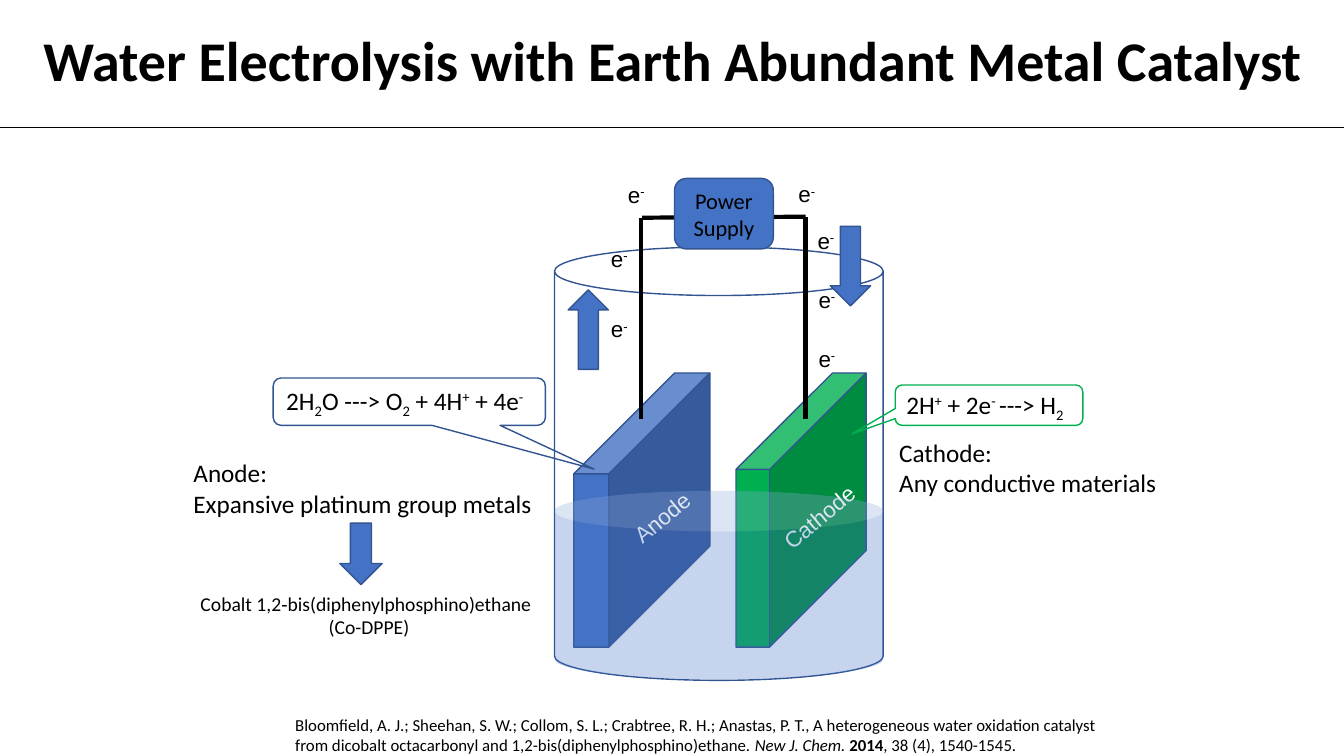
from lxml import etree
from pptx import Presentation
from pptx.dml.color import RGBColor
from pptx.enum.shapes import MSO_CONNECTOR, MSO_SHAPE as SHAPE
from pptx.enum.text import MSO_ANCHOR, MSO_AUTO_SIZE, PP_ALIGN as ALIGN
from pptx.oxml.ns import qn
from pptx.util import Pt

PX = 9144  # 100 px to the inch
COLORS = {"blue": "4472C4", "navy": "325491", "green": "00B050",
          "black": "000000", "white": "FFFFFF"}
BASELINES = {"sub": "-25000", "sup": "30000"}

# Each paragraph is a list of (words, style) runs
TITLE = "Water Electrolysis with Earth Abundant Metal Catalyst"
OXIDATION = [[("2H", ""), ("2", "sub"), ("O ---> O", ""), ("2", "sub"),
              (" + 4H", ""), ("+", "sup"), (" + 4e", ""), ("-", "sup")]]
REDUCTION = [[("2H", ""), ("+", "sup"), (" + 2e", ""), ("- ", "sup"),
              ("---> H", ""), ("2", "sub")]]
ELECTRON = [[("e", ""), ("-", "sup")]]
SUPPLY = [[("Power", "")], [("Supply", "")]]
CATHODE_NOTE = [[("Cathode:", "")], [("Any conductive materials", "")]]
ANODE_NOTE = [[("Anode:", "")], [("Expansive platinum group metals", "")]]
COBALT = [[("Cobalt 1,2‐bis(diphenylphosphino)ethane", "")], [("(Co-DPPE)", "")]]
CITATION = [[
    ("Bloomfield, A. J.; Sheehan, S. W.; Collom, S. L.; Crabtree, R. H.; Anastas, P. T., "
     "A heterogeneous water oxidation catalyst from dicobalt octacarbonyl and "
     "1,2-bis(diphenylphosphino)ethane. ", ""),
    ("New J. Chem. ", "italic"), ("2014", "bold"), (", 38 (4), 1540-1545.", "")]]

ELECTRON_SPOTS = [(596, 308), (596, 238), (613, 175), (782, 174),
                  (801, 220), (802, 279), (802, 337)]
WIRES = [(636, 216, 636, 416), (799, 215, 799, 416), (799, 215, 637, 216)]
PLATE_LABELS = [("Cathode", (760, 494, 105, 37)), ("Anode", (614, 495, 85, 37))]
FLOW_ARROWS = [((544, 307, 79, 40), 270), ((804, 244, 79, 40), 90)]

prs = Presentation()
prs.slide_width, prs.slide_height = 1333 * PX, 750 * PX
slide = prs.slides.add_slide(prs.slide_layouts[5])
shapes = slide.shapes


def emu(box):
    return [value * PX for value in box]


def rgb(name):
    return RGBColor.from_string(COLORS[name])


def write(frame, paragraphs, size, color="black", font="Calibri", aligns=()):
    frame.text = "\n".join("" for _ in paragraphs)
    for index, (paragraph, runs) in enumerate(zip(frame.paragraphs, paragraphs)):
        if aligns:
            paragraph.alignment = aligns[index]
        for words, style in runs:
            run = paragraph.add_run()
            run.text = words
            run.font.size, run.font.name = Pt(size), font
            run.font.color.rgb = rgb(color)
            if style in BASELINES:
                run._r.get_or_add_rPr().set("baseline", BASELINES[style])
            elif style:
                setattr(run.font, style, True)


def add_text(box, paragraphs, size, wrap=False, rotation=0, **look):
    text_box = shapes.add_textbox(*emu(box))
    text_box.rotation = rotation
    frame = text_box.text_frame
    frame.word_wrap = wrap
    frame.auto_size = MSO_AUTO_SIZE.SHAPE_TO_FIT_TEXT
    write(frame, paragraphs, size, **look)


def add_part(kind, box, fill=None, line="navy", adjust=(), rotation=0, alpha=None):
    part = shapes.add_shape(kind, *emu(box))
    part.shadow.inherit = False
    part.rotation = rotation
    for index, value in enumerate(adjust):
        part.adjustments[index] = value
    if fill:
        part.fill.solid()
        part.fill.fore_color.rgb = rgb(fill)
    else:
        part.fill.background()
    if alpha:
        color = part._element.spPr.find(qn("a:solidFill"))[0]
        etree.SubElement(color, qn("a:alpha")).set("val", str(alpha * 1000))
    if line:
        part.line.color.rgb = rgb(line)
        part.line.width = Pt(1)
    else:
        part.line.fill.background()
    return part


def add_line(ends, width):
    line = shapes.add_connector(MSO_CONNECTOR.STRAIGHT, *emu(ends))
    line.line.color.rgb = rgb("black")
    line.line.width = Pt(width)
    etree.SubElement(line._element.spPr, qn("a:effectLst"))


# Heading
title = shapes.title
title.left, title.top, title.width, title.height = emu((30, 27, 1274, 71))
title.text_frame.vertical_anchor = MSO_ANCHOR.MIDDLE
write(title.text_frame, [[(TITLE, "bold")]], 40, aligns=[ALIGN.CENTER])
title.text_frame.paragraphs[0].line_spacing = 0.9
add_line((0, 126, 1333, 126), 0.5)

# Half reactions
add_text((274, 377, 262, 40), OXIDATION, 18)
add_text((889, 381, 182, 40), REDUCTION, 18)

# Electrolysis cell, from back to front
add_part(SHAPE.CUBE, (569, 370, 135, 272), "blue", adjust=[0.742])
add_part(SHAPE.CAN, (550, 245, 326, 430), adjust=[0.148])
add_line(WIRES[0], 3)
add_part(SHAPE.CUBE, (730, 370, 129, 272), "green", adjust=[0.742])
for wire in WIRES[1:]:
    add_line(wire, 3)
for label, box in PLATE_LABELS:
    add_text(box, [[(label, "")]], 16, rotation=320.2, color="white",
             font="Arial", aligns=[ALIGN.CENTER])
add_part(SHAPE.ROUNDED_RECTANGULAR_CALLOUT, (888, 382, 186, 40), line="green",
         adjust=[-0.732, 0.713, 0.167])
add_part(SHAPE.CAN, (550, 487, 326, 187), "blue", line=None, adjust=[0.215], alpha=30)
supply = add_part(SHAPE.ROUNDED_RECTANGLE, (669, 177, 98, 70), "blue")
supply.text_frame.vertical_anchor = MSO_ANCHOR.MIDDLE
write(supply.text_frame, SUPPLY, 16, aligns=[ALIGN.CENTER] * 2)
for left, top in ELECTRON_SPOTS:
    add_text((left, top, 38, 37), ELECTRON, 16, font="Arial")
for box, rotation in FLOW_ARROWS:
    add_part(SHAPE.RIGHT_ARROW, box, "blue", rotation=rotation)

# Electrode notes and citation
add_part(SHAPE.ROUNDED_RECTANGULAR_CALLOUT, (271, 375, 270, 47),
         adjust=[0.679, 1.424, 0.167])
add_text((882, 429, 278, 71), CATHODE_NOTE, 18)
add_text((182, 449, 359, 71), ANODE_NOTE, 18)
add_part(SHAPE.DOWN_ARROW, (337, 519, 42, 61), "blue")
add_text((189, 582, 354, 57), COBALT, 14, wrap=True, aligns=[ALIGN.LEFT, ALIGN.CENTER])
add_text((283, 704, 817, 50), CITATION, 12, wrap=True)

prs.save("out.pptx")
